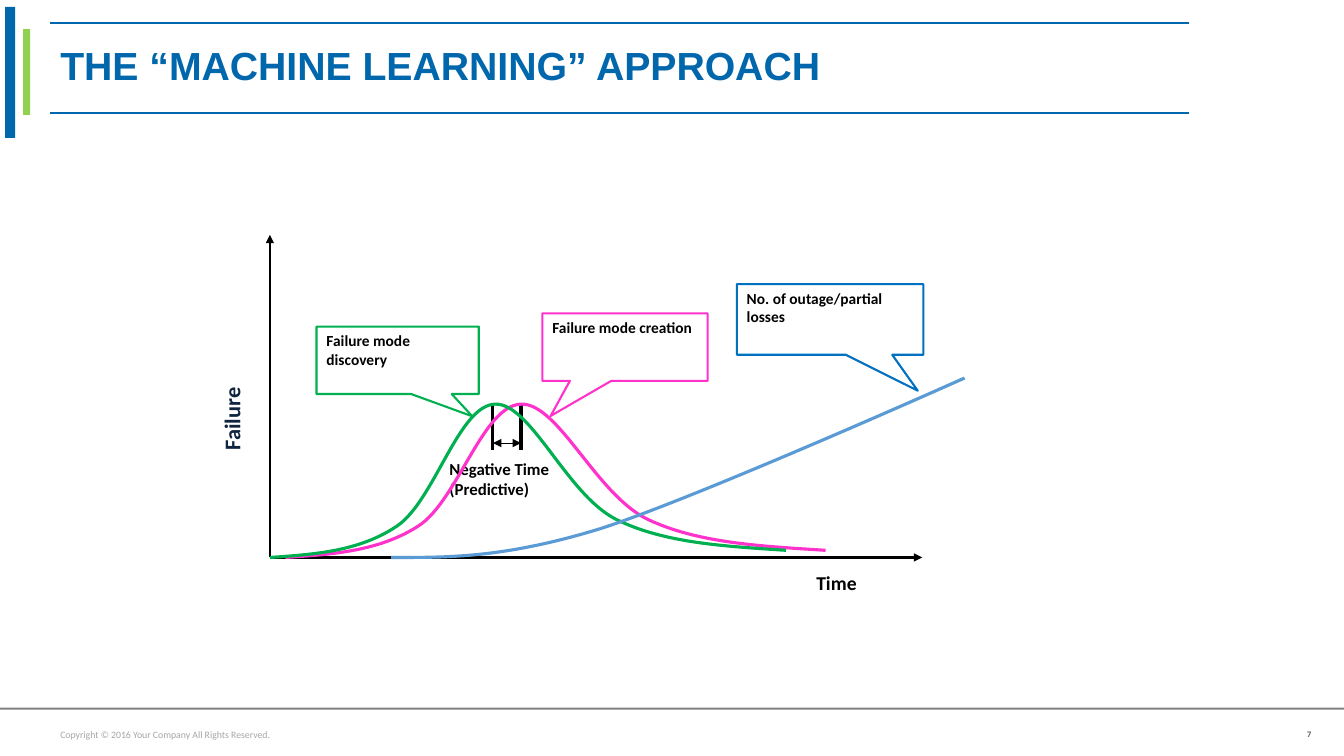
import lxml.etree
import pptx
import pptx.dml.color
import pptx.enum.shapes
import pptx.enum.text
import pptx.oxml.ns
import pptx.util

Pt = pptx.util.Pt
SHAPES = pptx.enum.shapes.MSO_SHAPE
ALIGN = pptx.enum.text.PP_ALIGN
ANCHOR = pptx.enum.text.MSO_ANCHOR
qn = pptx.oxml.ns.qn

BRAND_BLUE, BLACK, WHITE = "0067AC", "000000", "FFFFFF"
GREEN, PINK = "00B050", "FF33CC"

# Time axis height and the horizontal start of both axes
BASE_Y, AXIS_X = 398.2, 192.8

# Bell curve: distance from its left end, height on the slide
BELL_WIDTH = 385.9
BELL = [
    (0, 398.2),
    (33.8, 396), (67, 393.8), (95, 375.8),
    (123.1, 357.8), (141.1, 289.4), (168.5, 288.7),
    (195.1, 288), (221.8, 352.8), (258.5, 370.8),
    (294.5, 388.1), (340.6, 390.2), (BELL_WIDTH, 393.1),
]
OUTAGES = [
    (279.4, BASE_Y),
    (319, 398.2), (359, 398.9), (427.7, 378),
    (496.1, 356.4), (689, 270), (689, 270),
]


def rgb(color):
    return pptx.dml.color.RGBColor.from_string(color)


def write(shape, lines, size, color, bold=True, font="Calibri", align=ALIGN.LEFT,
          anchor=ANCHOR.TOP, after=0, spacing=None, insets=(7.2, 3.6, 7.2, 3.6)):
    frame = shape.text_frame
    frame.word_wrap = True
    frame.vertical_anchor = anchor
    frame.margin_left, frame.margin_top, frame.margin_right, frame.margin_bottom = map(Pt, insets)
    for index, line in enumerate(lines):
        paragraph = frame.add_paragraph() if index else frame.paragraphs[0]
        paragraph.alignment = align
        paragraph.space_after = Pt(after)
        if spacing:
            paragraph.line_spacing = spacing
        run = paragraph.add_run()
        run.text = line
        run.font.name = font
        run.font.size = Pt(size)
        run.font.bold = bold
        run.font.color.rgb = rgb(color)


def add_label(slide, box, lines, size, color, **style):
    label = slide.shapes.add_textbox(*map(Pt, box))
    write(label, lines, size, color, **style)
    return label


def add_bar(slide, box, color):
    bar = slide.shapes.add_shape(SHAPES.RECTANGLE, *map(Pt, box))
    bar.shadow.inherit = False
    bar.fill.solid()
    bar.fill.fore_color.rgb = rgb(color)
    bar.line.fill.background()


def add_line(slide, start, end, color, width, arrows=()):
    line = slide.shapes.add_connector(
        pptx.enum.shapes.MSO_CONNECTOR.STRAIGHT, *map(Pt, start + end))
    line.line.color.rgb = rgb(color)
    line.line.width = Pt(width)
    for arrow in arrows:
        lxml.etree.SubElement(line.line._get_or_add_ln(), qn(f"a:{arrow}"), type="triangle")
    lxml.etree.SubElement(line._element.spPr, qn("a:effectLst"))


def add_curve(slide, points, color):
    """Draw cubic curves: a start, then two control points and an end each."""
    start, *rest = [(Pt(x), Pt(y)) for x, y in points]
    builder = slide.shapes.build_freeform(*start)
    builder.add_line_segments(rest, close=False)
    curve = builder.convert_to_shape()
    curve.shadow.inherit = False
    curve.fill.background()
    curve.line.color.rgb = rgb(color)
    curve.line.width = Pt(2.25)
    # Turn every three straight segments into one cubic segment
    outline = curve._element.find(".//" + qn("a:path"))
    segments = outline.findall(qn("a:lnTo"))
    for first in range(0, len(segments), 3):
        cubic = lxml.etree.SubElement(outline, qn("a:cubicBezTo"))
        for segment in segments[first:first + 3]:
            cubic.append(segment[0])
            outline.remove(segment)


def add_bell(slide, left, width, color):
    add_curve(slide, [(left + x * width / BELL_WIDTH, y) for x, y in BELL], color)


def add_callout(slide, box, tip, text, color):
    callout = slide.shapes.add_shape(SHAPES.RECTANGULAR_CALLOUT, *map(Pt, box))
    callout.shadow.inherit = False
    callout.adjustments[0], callout.adjustments[1] = tip
    callout.fill.solid()
    callout.fill.fore_color.rgb = rgb(WHITE)
    callout.line.color.rgb = rgb(color)
    callout.line.width = Pt(1.5)
    write(callout, [text], 11, BLACK, after=10)


def add_frame(slide):
    # Header bars and rules
    add_bar(slide, (16.6, 20.9, 5, 61.2), "92D050")
    add_bar(slide, (3.6, 5, 7.2, 93.6), BRAND_BLUE)
    for y in (80.6, 16.6):
        add_line(slide, (36, y), (849.6, y), BRAND_BLUE, 1.5)

    # Footer
    add_bar(slide, (0, 505.4, 960, 1.5), "808080")
    add_label(slide, (36, 516.2, 901.4, 16.6),
              ["Copyright © 2016 Your Company All Rights Reserved."],
              7, "A6A6A6", bold=False, anchor=ANCHOR.MIDDLE)
    add_label(slide, (897.1, 516.2, 39.6, 18), ["7"], 6, "595959",
              align=ALIGN.RIGHT, insets=(4.3, 4.3, 0, 0))

    # Title
    add_label(slide, (36, 20.9, 819.4, 55.4), ["THE “MACHINE LEARNING” APPROACH"],
              28, BRAND_BLUE, font="Arial", anchor=ANCHOR.MIDDLE, spacing=0.9)


def add_diagram(slide):
    # Gap between the two peaks
    discovery_peak, creation_peak = 352.1, 372.2
    for peak in (discovery_peak, creation_peak):
        add_line(slide, (peak, 288.5), (peak, 321.5), BLACK, 2.25)
    add_line(slide, (discovery_peak, 316.5), (creation_peak, 316.5), BLACK, 0.75,
             ("headEnd", "tailEnd"))
    add_label(slide, (313.9, 324, 92.9, 36.7), ["Negative Time", "(Predictive)"], 12, BLACK)

    # Axes
    time = add_label(slide, (576, 404.6, 74.2, 24.5), ["Time"], 14, BLACK, after=10)
    time.fill.solid()
    time.fill.fore_color.rgb = rgb(WHITE)
    for end in ((658.8, BASE_Y), (AXIS_X, 167.8)):
        add_line(slide, (AXIS_X, BASE_Y), end, BLACK, 1.5, ("tailEnd",))

    # Failure mode curves and callouts
    add_bell(slide, 203.8, BELL_WIDTH, PINK)
    add_bell(slide, AXIS_X, 368.6, GREEN)
    add_callout(slide, (226.1, 233.3, 115.9, 48.2), (0.46, 0.83),
                "Failure mode discovery", GREEN)
    add_callout(slide, (387.4, 223.9, 118.1, 48.2), (-0.45, 1.02),
                "Failure mode creation", PINK)
    add_callout(slide, (526.3, 203, 133.2, 50.4), (0.47, 1.01),
                "No. of outage/partial losses", "0070C0")
    failure = add_label(slide, (141.8, 274.3, 64.8, 43.9), ["Failure"], 16, "0F243E", after=10)
    failure.rotation = 270

    # Outage curve
    add_curve(slide, OUTAGES, "5B9BD5")


def main():
    deck = pptx.Presentation()
    deck.slide_width, deck.slide_height = Pt(960), Pt(540)
    slide = deck.slides.add_slide(deck.slide_layouts[6])
    add_frame(slide)
    add_diagram(slide)
    deck.save("out.pptx")


if __name__ == "__main__":
    main()
